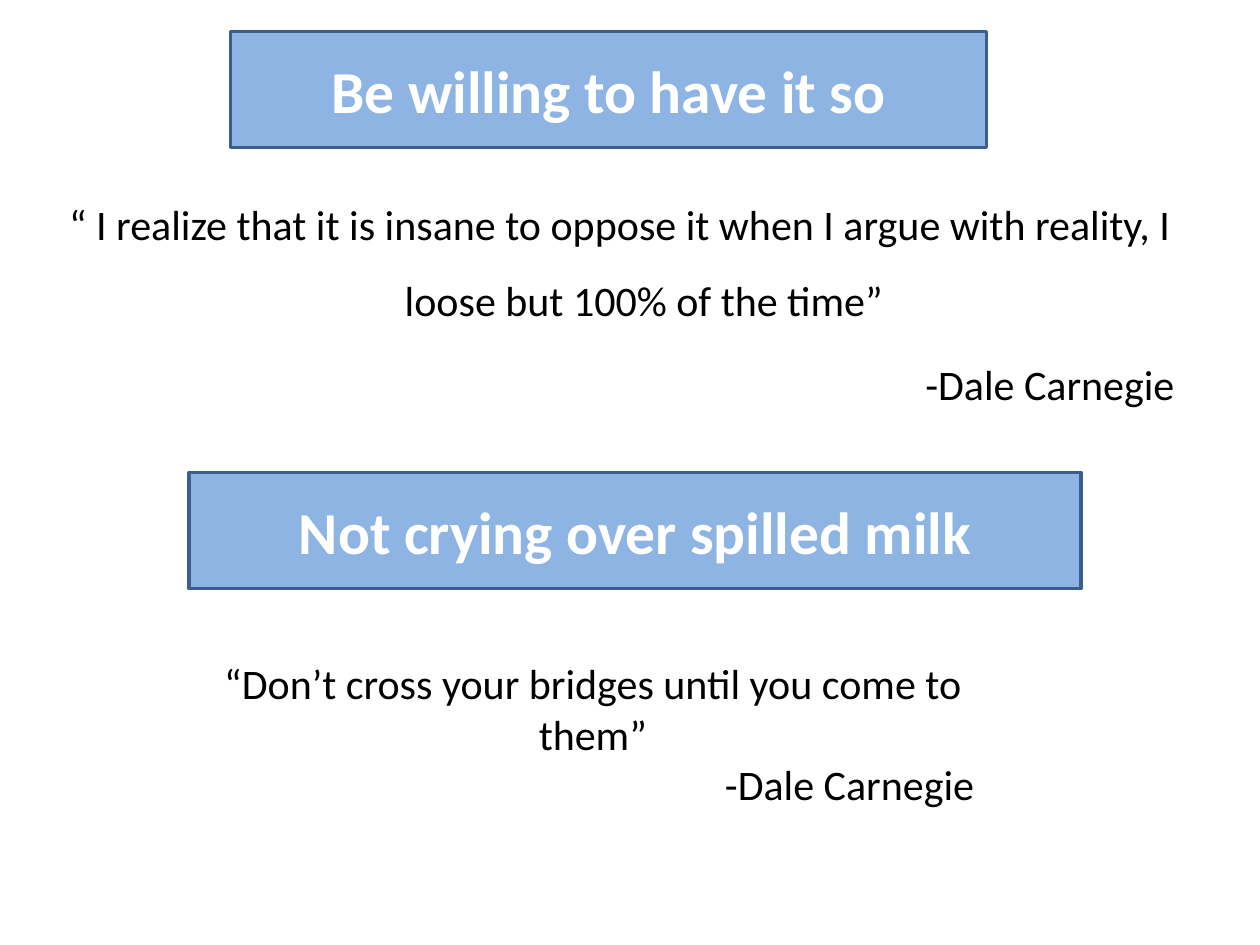
from dataclasses import dataclass

from pptx import Presentation
from pptx import util as u
from pptx.dml.color import RGBColor
from pptx.enum import shapes, text

COLORS = {"banner": "8EB4E3", "border": "3A5F8C", "title": "FFFFFF", "body": "000000"}
FONT = "Calibri"
AUTHOR = "-Dale Carnegie"
CENTER, RIGHT = text.PP_ALIGN.CENTER, text.PP_ALIGN.RIGHT


@dataclass
class Box:
    left: float
    top: float
    width: float
    height: float

    def lengths(self) -> list:
        return [u.Inches(v) for v in (self.left, self.top, self.width, self.height)]


@dataclass
class Banner:
    title: str
    box: Box


@dataclass
class Quote:
    words: str
    box: Box
    spacing: dict
    hanging: float = 0


BANNERS = [
    Banner("Be willing to have it so", Box(1.83, 0.25, 6, 0.92)),
    Banner("Not crying over spilled milk", Box(1.5, 3.75, 7.08, 0.92)),
]
QUOTES = [
    Quote(
        "“ I realize that it is insane to oppose it when I argue with reality, "
        "I loose but 100% of the time”",
        Box(0.42, 1.33, 9, 4.95),
        {"line_spacing": 1.5, "space_before": u.Pt(4.8)},
        0.38,
    ),
    Quote(
        "“Don’t cross your bridges until you come to them”",
        Box(1.58, 5.17, 6.25, 1.72),
        {},
    ),
]


def set_all(target, values: dict) -> None:
    for name, value in values.items():
        setattr(target, name, value)


def write(p, words: str, align, size: int, color: str, bold: bool = False) -> None:
    p.alignment = align
    r = p.add_run()
    r.text = words
    set_all(r.font, {"name": FONT, "size": u.Pt(size), "bold": bold})
    r.font.color.rgb = RGBColor.from_string(COLORS[color])


def draw_banner(s, banner: Banner) -> None:
    sp = s.shapes.add_shape(shapes.MSO_SHAPE.RECTANGLE, *banner.box.lengths())
    sp.shadow.inherit = False
    sp.fill.solid()
    sp.fill.fore_color.rgb = RGBColor.from_string(COLORS["banner"])
    sp.line.color.rgb = RGBColor.from_string(COLORS["border"])
    sp.line.width = u.Pt(2)
    tf = sp.text_frame
    set_all(tf, {"word_wrap": True, "vertical_anchor": text.MSO_ANCHOR.MIDDLE})
    write(tf.paragraphs[0], banner.title, CENTER, 34, "title", True)


def draw_quote(s, quote: Quote) -> None:
    tf = s.shapes.add_textbox(*quote.box.lengths()).text_frame
    tf.word_wrap = True
    lines = [(tf.paragraphs[0], quote.words, CENTER), (tf.add_paragraph(), AUTHOR, RIGHT)]
    for p, words, align in lines:
        write(p, words, align, 24, "body")
        set_all(p, quote.spacing)
        if quote.hanging:
            indent = u.Inches(quote.hanging)
            pPr = p._p.get_or_add_pPr()
            pPr.set("marL", str(indent))
            pPr.set("indent", str(-indent))


def main() -> None:
    prs = Presentation()
    set_all(prs, {"slide_width": u.Inches(10), "slide_height": u.Inches(7.5)})
    s = prs.slides.add_slide(prs.slide_layouts[6])
    for banner, quote in zip(BANNERS, QUOTES):
        draw_quote(s, quote)
        draw_banner(s, banner)
    prs.save("out.pptx")


if __name__ == "__main__":
    main()
